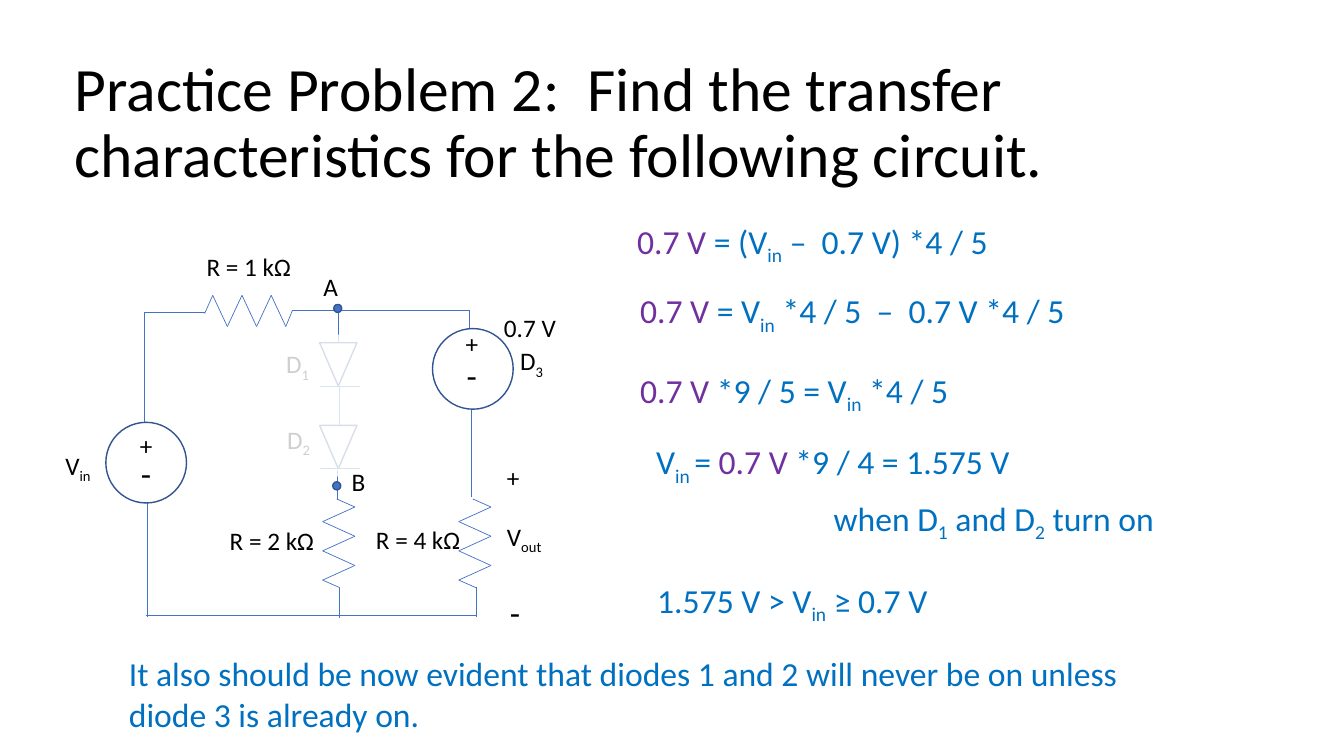
import itertools

import pptx
import pptx.dml.color
import pptx.enum.shapes
import pptx.enum.text
import pptx.oxml.ns
import pptx.util
from lxml import etree
from pptx.util import Inches, Pt

COLORS = {
    "black": "000000", "white": "FFFFFF", "wire": "4472C4",
    "outline": "325491", "blue": "0070C0", "purple": "7030A0",
}
TITLE = "Practice Problem 2:  Find the transfer characteristics for the following circuit."

# Texts: a part between underscores is a subscript.
# (left, top, width, text)
LABELS = [
    (0.55, 4.42, 0.53, "V_in_"),
    (1.95, 2.44, 1.18, "R = 1 kΩ"),
    (2.18, 5.16, 1.18, "R = 2 kΩ"),
    (3.63, 5.15, 1.18, "R = 4 kΩ"),
    (5.06, 3.38, 0.45, "D_3_"),
    (4.93, 4.54, 0.36, "+"),
    (4.93, 5.12, 0.60, "V_out_"),
    (4.90, 3.05, 0.72, "0.7 V"),
    (3.11, 2.64, 0.43, "A"),
    (3.39, 4.58, 0.43, "B"),
]
OFF_LABELS = [(2.74, 3.41, 0.45, "D_1_"), (2.75, 4.16, 0.45, "D_2_")]
OUTPUT_MINUS = (4.96, 5.82)

# (left, top, width, height, [(color, text), ...])
EQUATIONS = [
    (6.22, 2.14, 5.80, 0.5, [("purple", "0.7 V "), ("blue", "= (V_in_ –  0.7 V) *4 / 5")]),
    (6.25, 2.83, 5.80, 0.5, [("purple", "0.7 V "), ("blue", "= V_in_ *4 / 5  –  0.7 V *4 / 5")]),
    (6.25, 3.62, 5.80, 0.5, [("purple", "0.7 V "), ("blue", "*9 / 5 = V_in_ *4 / 5")]),
    (6.41, 4.33, 5.80, 0.5, [("blue", "V_in _= "), ("purple", "0.7 V "),
                             ("blue", "*9 / 4 = 1.575 V")]),
    (8.17, 4.89, 3.71, 0.5, [("blue", "when D_1_ and D_2_ turn on")]),
    (6.42, 5.70, 4.09, 0.5, [("blue", "1.575 V > V_in_ ≥ 0.7 V")]),
    (1.18, 6.43, 10.49, 0.91, [("blue", "It also should be now evident that diodes 1 and 2 "
                                "will never be on unless diode 3 is already on.")]),
]

# Each wire is a chain of points
WIRES = [
    [(1.43, 4.19), (1.43, 3.1), (2.03, 3.1)],
    [(2.9, 3.08), (4.66, 3.08), (4.66, 3.38)],
    [(1.46, 4.97), (1.46, 6.12)],
    [(1.45, 6.1), (4.72, 6.1)],
    [(3.36, 3.1), (3.36, 3.4)],
    [(3.37, 3.83), (3.37, 4.23)],
    [(3.35, 4.66), (3.35, 4.96)],
    [(3.37, 5.83), (3.37, 6.13)],
    [(4.68, 3.83), (4.68, 4.93)],
    [(4.72, 5.82), (4.72, 6.12)],
]
TEETH = 6
TOOTH_STEP = 0.145
DIODES = [(3.17, 3.40), (3.17, 4.22)]
VEIL = (2.79, 3.32, 1.07, 1.41)
# (circle left, circle top, plus left, plus top, minus left, minus top)
SOURCES = [
    (1.05, 4.19, 1.29, 4.22, 1.30, 4.44),
    (4.29, 3.26, 4.52, 3.21, 4.53, 3.47),
]
NODES = [(3.31, 3.02), (3.30, 4.78)]

SHAPES = pptx.enum.shapes.MSO_SHAPE
qn = pptx.oxml.ns.qn


def rgb(name):
    return pptx.dml.color.RGBColor.from_string(COLORS[name])


def add_spans(para, color, text):
    """Add runs to a paragraph, lowering every part between underscores."""
    for index, part in enumerate(text.split("_")):
        if part:
            span = para.add_run()
            span.text = part
            span.font.color.rgb = rgb(color)
            if index % 2:
                span._r.get_or_add_rPr().set("baseline", "-25000")


def add_text(page, left, top, width, height, parts, size):
    box = page.shapes.add_textbox(Inches(left), Inches(top), Inches(width), Inches(height))
    box.text_frame.word_wrap = True
    para = box.text_frame.paragraphs[0]
    para.font.name = "Calibri"
    para.font.size = Pt(size)
    for color, text in parts:
        add_spans(para, color, text)


def add_label(page, left, top, width, text):
    add_text(page, left, top, width, 0.4, [("black", text)], 18)


def add_minus(page, left, top):
    add_text(page, left, top, 0.36, 0.5, [("black", "-")], 24)


def add_chain(page, points):
    """Join neighbouring points with straight lines."""
    for start, end in itertools.pairwise(points):
        line = page.shapes.add_connector(
            pptx.enum.shapes.MSO_CONNECTOR.STRAIGHT, *map(Inches, start + end))
        line.line.color.rgb = rgb("wire")
        line.line.width = Pt(0.5)
        etree.SubElement(line._element.spPr, qn("a:effectLst"))


def add_figure(page, kind, left, top, width, height, fill=None, outline=True):
    figure = page.shapes.add_shape(
        kind, Inches(left), Inches(top), Inches(width), Inches(height))
    figure.shadow.inherit = False
    if fill:
        figure.fill.solid()
        figure.fill.fore_color.rgb = rgb(fill)
    else:
        figure.fill.background()
    if outline:
        figure.line.color.rgb = rgb("outline")
        figure.line.width = Pt(1)
    else:
        figure.line.fill.background()
    return figure


def add_resistors(page):
    across = [(2.11 + TOOTH_STEP * i, 3.24 if i % 2 else 2.93) for i in range(TEETH)]
    add_chain(page, [(2.03, 3.11), *across, (2.9, 3.08)])
    for left in (3.2, 4.55):
        down = [(left if i % 2 else left + 0.32, 5.03 + TOOTH_STEP * i) for i in range(TEETH)]
        add_chain(page, [(left + 0.14, 4.95), *down, (left + 0.17, 5.83)])


def add_diode(page, left, top):
    triangle = add_figure(page, SHAPES.ISOSCELES_TRIANGLE, left, top, 0.37, 0.43)
    triangle.rotation = 180
    add_chain(page, [(left, top + 0.43), (left + 0.4, top + 0.43)])


def add_veil(page):
    """Fade the diodes that are off."""
    veil = add_figure(page, SHAPES.RECTANGLE, *VEIL, fill="white", outline=False)
    color = veil._element.spPr.find(qn("a:solidFill"))[0]
    etree.SubElement(color, qn("a:alpha"), val="81000")


def main():
    deck = pptx.Presentation()
    deck.slide_width, deck.slide_height = Inches(13.33), Inches(7.5)
    page = deck.slides.add_slide(deck.slide_layouts[5])

    title = page.shapes.title
    title.left, title.top, title.width, title.height = map(Inches, (0.64, 0.51, 12.06, 1.45))
    title.text_frame.vertical_anchor = pptx.enum.text.MSO_ANCHOR.MIDDLE
    title.text_frame.text = TITLE
    para = title.text_frame.paragraphs[0]
    para.alignment = pptx.enum.text.PP_ALIGN.LEFT
    para.line_spacing = 0.9
    para.font.name = "Calibri"
    para.font.size = Pt(44)
    para.font.color.rgb = rgb("black")

    for wire in WIRES:
        add_chain(page, wire)
    add_resistors(page)
    for diode in DIODES:
        add_diode(page, *diode)
    for label in OFF_LABELS:
        add_label(page, *label)
    add_veil(page)

    for left, top, plus_left, plus_top, minus_left, minus_top in SOURCES:
        add_figure(page, SHAPES.OVAL, left, top, 0.8, 0.8, fill="white")
        add_label(page, plus_left, plus_top, 0.36, "+")
        add_minus(page, minus_left, minus_top)
    for left, top in NODES:
        add_figure(page, SHAPES.OVAL, left, top, 0.08, 0.08, fill="wire")
    for label in LABELS:
        add_label(page, *label)
    add_minus(page, *OUTPUT_MINUS)
    for left, top, width, height, parts in EQUATIONS:
        add_text(page, left, top, width, height, parts, 24)

    deck.save("out.pptx")


if __name__ == "__main__":
    main()
